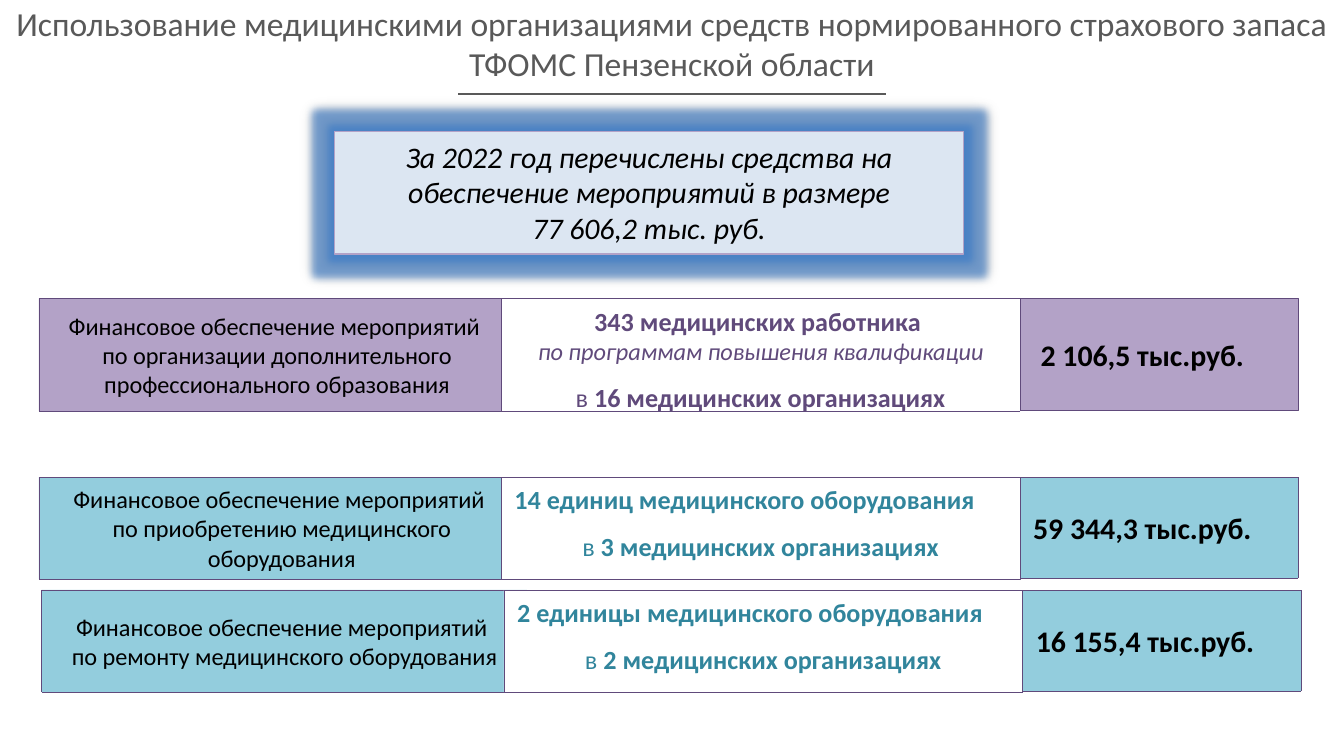
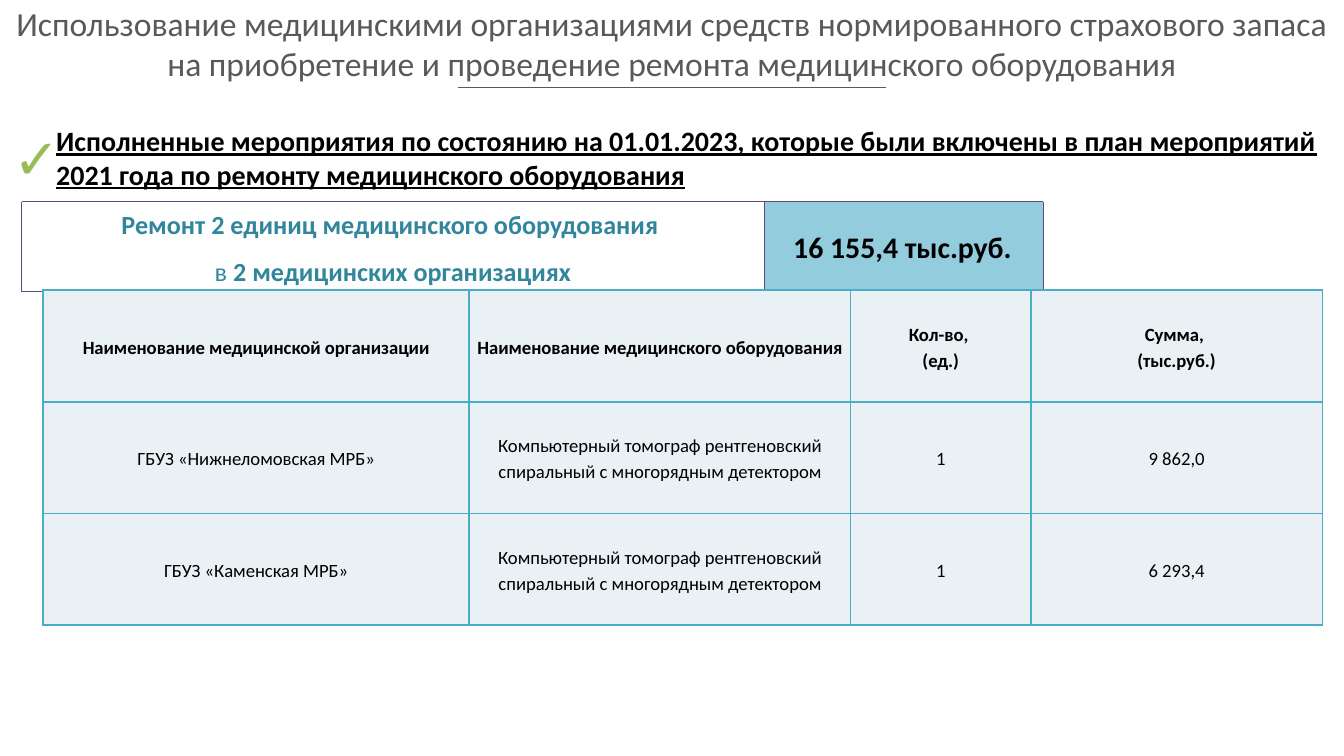
from dataclasses import dataclass
from typing import NamedTuple

from lxml import etree
from pptx import Presentation
from pptx.dml.color import RGBColor
from pptx.enum.dml import MSO_LINE
from pptx.enum.shapes import MSO_CONNECTOR as Connector, MSO_SHAPE as Preset
from pptx.enum.text import MSO_ANCHOR as Anchor, MSO_AUTO_SIZE as AutoSize, PP_ALIGN as Align
from pptx.oxml import parse_xml
from pptx.oxml.ns import nsdecls, qn
from pptx.util import Inches, Pt


class Box(NamedTuple):
    """Left, top, width and height in inches."""

    left: float
    top: float
    width: float
    height: float

    def lengths(self):
        """Return the four sides as slide lengths."""
        return [Inches(side) for side in self]


class Style(NamedTuple):
    """Look of one run of text."""

    size: float
    color: str
    bold: bool = False
    italic: bool = False
    underline: bool = False


class Para(NamedTuple):
    """Paragraph made of (text, style) runs."""

    runs: list
    align: Align = Align.CENTER
    spacing: float = 1.0


@dataclass(frozen=True)
class Theme:
    """Colours, font and type styles shared by the slides."""

    font: str = "Calibri"
    white: str = "FFFFFF"
    gray: str = "595959"
    lilac: str = "B3A2C7"
    purple: str = "604A7B"
    aqua: str = "93CDDD"
    teal: str = "31859C"
    pale_blue: str = "DCE6F2"
    glow: str = "3A7CCB"
    cell: str = "E9F1F5"
    grid: str = "4BACC6"
    title: Style = Style(18, "595959")
    summary: Style = Style(16, "000000", italic=True)
    label: Style = Style(13, "000000")
    amount: Style = Style(16, "000000", bold=True)
    statement: Style = Style(15, "000000", bold=True, underline=True)
    check: Style = Style(30, "9BBB59", bold=True)
    table_head: Style = Style(10, "000000", bold=True)
    table_body: Style = Style(10, "000000")


THEME = Theme()


def rgb(value):
    """Turn a hex value into a colour."""
    return RGBColor.from_string(value)


def write(frame, paras, anchor=Anchor.TOP, wrap=True):
    """Fill a text frame with paragraphs, run by run."""
    frame.word_wrap = wrap
    frame.vertical_anchor = anchor
    for index, para in enumerate(paras):
        paragraph = frame.paragraphs[0] if index == 0 else frame.add_paragraph()
        paragraph.alignment = para.align
        paragraph.line_spacing = para.spacing
        for text, style in para.runs:
            run = paragraph.add_run()
            run.text = text
            font = run.font
            font.name = THEME.font
            font.size = Pt(style.size)
            font.bold = style.bold
            font.italic = style.italic
            font.underline = style.underline
            font.color.rgb = rgb(style.color)


def add_panel(slide, box, fill, paras, anchor=Anchor.MIDDLE):
    """Add a filled rectangle with a fine dotted outline."""
    panel = slide.shapes.add_shape(Preset.RECTANGLE, *box.lengths())
    panel.shadow.inherit = False
    panel.fill.solid()
    panel.fill.fore_color.rgb = rgb(fill)
    panel.line.color.rgb = rgb(THEME.purple)
    panel.line.width = Pt(0.25)
    panel.line.dash_style = MSO_LINE.ROUND_DOT
    write(panel.text_frame, paras, anchor)
    return panel


def add_note(slide, box, para, wrap=True):
    """Add a free text box that grows with its text."""
    frame = slide.shapes.add_textbox(*box.lengths()).text_frame
    write(frame, [para], wrap=wrap)
    frame.auto_size = AutoSize.SHAPE_TO_FIT_TEXT


def add_heading(slide, box, text, rule_gap):
    """Place the slide title and the centred rule under it."""
    title = slide.shapes.title
    title.left, title.top, title.width, title.height = box.lengths()
    frame = title.text_frame
    frame.auto_size = AutoSize.NONE
    frame.margin_left = frame.margin_right = Inches(0.09)
    frame.margin_top = frame.margin_bottom = Inches(0.04)
    write(frame, [Para([(text, THEME.title)])], Anchor.MIDDLE)

    center, half = box.left + box.width / 2, 1.59
    level = Inches(box.top + box.height + rule_gap)
    rule = slide.shapes.add_connector(
        Connector.STRAIGHT, Inches(center - half), level, Inches(center + half), level
    )
    rule.line.color.rgb = rgb(THEME.gray)
    rule.line.width = Pt(0.75)
    etree.SubElement(rule._element.spPr, qn("a:effectLst"))


def add_summary(slide, box, lines):
    """Add the glowing box with the yearly total."""
    paras = [Para([(line, THEME.summary)]) for line in lines]
    summary = add_panel(slide, box, THEME.pale_blue, paras, Anchor.TOP)
    summary.line.color.rgb = rgb(THEME.lilac)
    summary.line.width = Pt(0.75)
    summary.line.dash_style = MSO_LINE.SOLID
    summary.text_frame.auto_size = AutoSize.SHAPE_TO_FIT_TEXT
    properties = summary._element.spPr
    properties.replace(properties.find(qn("a:effectLst")), parse_xml(
        f'<a:effectLst {nsdecls("a")}>'
        f'<a:glow rad="{Inches(0.11)}"><a:srgbClr val="{THEME.glow}">'
        '<a:alpha val="60000"/></a:srgbClr></a:glow>'
        f'<a:outerShdw blurRad="{Pt(5)}" dist="0" dir="0"><a:srgbClr val="000000">'
        '<a:alpha val="40000"/></a:srgbClr></a:outerShdw></a:effectLst>'
    ))


def count_paras(lead, count, color, align=Align.CENTER, extra=None):
    """Build the lines that tell what was funded and in how many places."""
    strong, plain = Style(14, color, bold=True), Style(14, color)
    paras = [Para([(lead, strong)], align)]
    if extra:
        paras.append(Para([(extra, Style(13, color, italic=True))]))
    places = f"{count} медицинских организациях"
    return paras + [Para([("в ", plain), (places, strong)], spacing=1.5)]


def add_amount(slide, box, fill, amount):
    """Add the panel with a sum of money."""
    add_panel(slide, box, fill, [Para([(amount, THEME.amount)])])


def add_funding_row(slide, box, fill, label_width, purpose, detail, amount):
    """Add one row: purpose, details and amount."""
    label_lines = ("Финансовое обеспечение мероприятий ", purpose)
    label = [Para([(line, THEME.label)]) for line in label_lines]
    add_panel(slide, box._replace(width=label_width), fill, label)
    amount_width = 2.32
    amount_box = box._replace(left=box.left + box.width - amount_width,
                              width=amount_width, height=box.height - 0.01)
    add_amount(slide, amount_box, fill, amount)
    detail_box = box._replace(left=box.left + 3.44, width=3.86)
    add_panel(slide, detail_box, THEME.white, detail, Anchor.TOP)


def add_repair_row(slide, box, detail, amount):
    """Add the repair total with its amount on the right."""
    amount_box = box._replace(left=box.left + box.width - 2.09, width=2.09)
    add_amount(slide, amount_box, THEME.aqua, amount)
    add_panel(slide, box._replace(width=5.53), THEME.white, detail, Anchor.TOP)


def add_cell_borders(cell):
    """Draw the four sides of a table cell."""
    properties = cell._tc.get_or_add_tcPr()
    for index, side in enumerate(("lnL", "lnR", "lnT", "lnB")):
        properties.insert(index, parse_xml(
            f'<a:{side} {nsdecls("a")} w="{Pt(1)}"><a:solidFill>'
            f'<a:srgbClr val="{THEME.grid}"/></a:solidFill></a:{side}>'
        ))


def add_equipment_table(slide, box, column_widths, records):
    """Add the table of repaired equipment."""
    frame = slide.shapes.add_table(len(records), len(column_widths), *box.lengths())
    table = frame.table
    table.horz_banding = False
    table.first_row = False
    for column, width in zip(table.columns, column_widths):
        column.width = Inches(width)
    for row_index, record in enumerate(records):
        table.rows[row_index].height = Inches(box.height / len(records))
        style = THEME.table_body if row_index else THEME.table_head
        for column_index, text in enumerate(record):
            cell = table.cell(row_index, column_index)
            cell.margin_left = cell.margin_right = Inches(0.05)
            cell.margin_top = cell.margin_bottom = 0
            cell.vertical_anchor = Anchor.MIDDLE
            cell.fill.solid()
            cell.fill.fore_color.rgb = rgb(THEME.cell)
            lines = [Para([(line, style)], spacing=1.15) for line in text.split("\n")]
            write(cell.text_frame, lines, Anchor.MIDDLE)
            add_cell_borders(cell)


def build_overview(slide, page):
    """Build the slide with the funding by purpose."""
    add_heading(
        slide, page._replace(height=0.64),
        "Использование медицинскими организациями средств нормированного "
        "страхового запаса ТФОМС Пензенской области", 0.06,
    )
    add_summary(slide, Box(2.49, 0.98, 4.68, 0.91), (
        "За 2022 год перечислены средства на обеспечение мероприятий в размере",
        "77 606,2 тыс. руб.",
    ))
    add_funding_row(
        slide, Box(0.29, 2.22, 9.37, 0.84), THEME.lilac, 3.54,
        "по организации дополнительного профессионального образования",
        count_paras("343 медицинских работника ", 16, THEME.purple,
                    extra="по программам повышения квалификации"),
        "2 106,5 тыс.руб.",
    )
    equipment_rows = (
        (0.29, 3.55, "по приобретению медицинского оборудования",
         "14 единиц медицинского оборудования ", 3, "59 344,3 тыс.руб."),
        (0.31, 4.39, "по ремонту медицинского оборудования",
         "2 единицы медицинского оборудования ", 2, "16 155,4 тыс.руб."),
    )
    for left, top, purpose, lead, count, amount in equipment_rows:
        detail = count_paras(lead, count, THEME.teal, Align.JUSTIFY)
        add_funding_row(slide, Box(left, top, 9.37, 0.76), THEME.aqua, 3.61,
                        purpose, detail, amount)


def build_repairs(slide, page):
    """Build the slide with the completed repairs."""
    add_heading(
        slide, page._replace(height=0.64),
        "Использование медицинскими организациями средств нормированного страхового "
        "запаса на приобретение и проведение ремонта медицинского оборудования", 0.01,
    )
    statement = (
        "Исполненные мероприятия по состоянию на 01.01.2023, которые были включены "
        "в план мероприятий 2021 года по ремонту медицинского оборудования"
    )
    add_note(slide, Box(0.32, 0.87, 9.68, 0.61),
             Para([(statement, THEME.statement)], Align.LEFT))
    add_note(slide, Box(0, 0.87, 0.53, 0.61),
             Para([("✓", THEME.check)], Align.LEFT), wrap=False)
    add_repair_row(
        slide, Box(0.16, 1.5, 7.6, 0.67),
        count_paras("Ремонт 2 единиц медицинского оборудования ", 2, THEME.teal),
        "16 155,4 тыс.руб.",
    )
    scanner = "Компьютерный томограф рентгеновский спиральный с многорядным детектором"
    add_equipment_table(slide, Box(0.32, 2.16, 9.52, 2.49), (3.17, 2.84, 1.34, 2.17), (
        ("Наименование медицинской организации", "Наименование медицинского оборудования",
         "Кол-во, \n(ед.)", "Сумма, \n(тыс.руб.)"),
        ("ГБУЗ «Нижнеломовская МРБ»", scanner, "1", "9 862,0"),
        ("ГБУЗ «Каменская МРБ»", scanner, "1", "6 293,4"),
    ))


def main():
    """Create the presentation and save it."""
    deck = Presentation()
    page = Box(0, 0, 10, 10 * 9 / 16)
    deck.slide_width, deck.slide_height = Inches(page.width), Inches(page.height)
    for build in (build_overview, build_repairs):
        build(deck.slides.add_slide(deck.slide_layouts[5]), page)
    deck.save("out.pptx")


if __name__ == "__main__":
    main()
